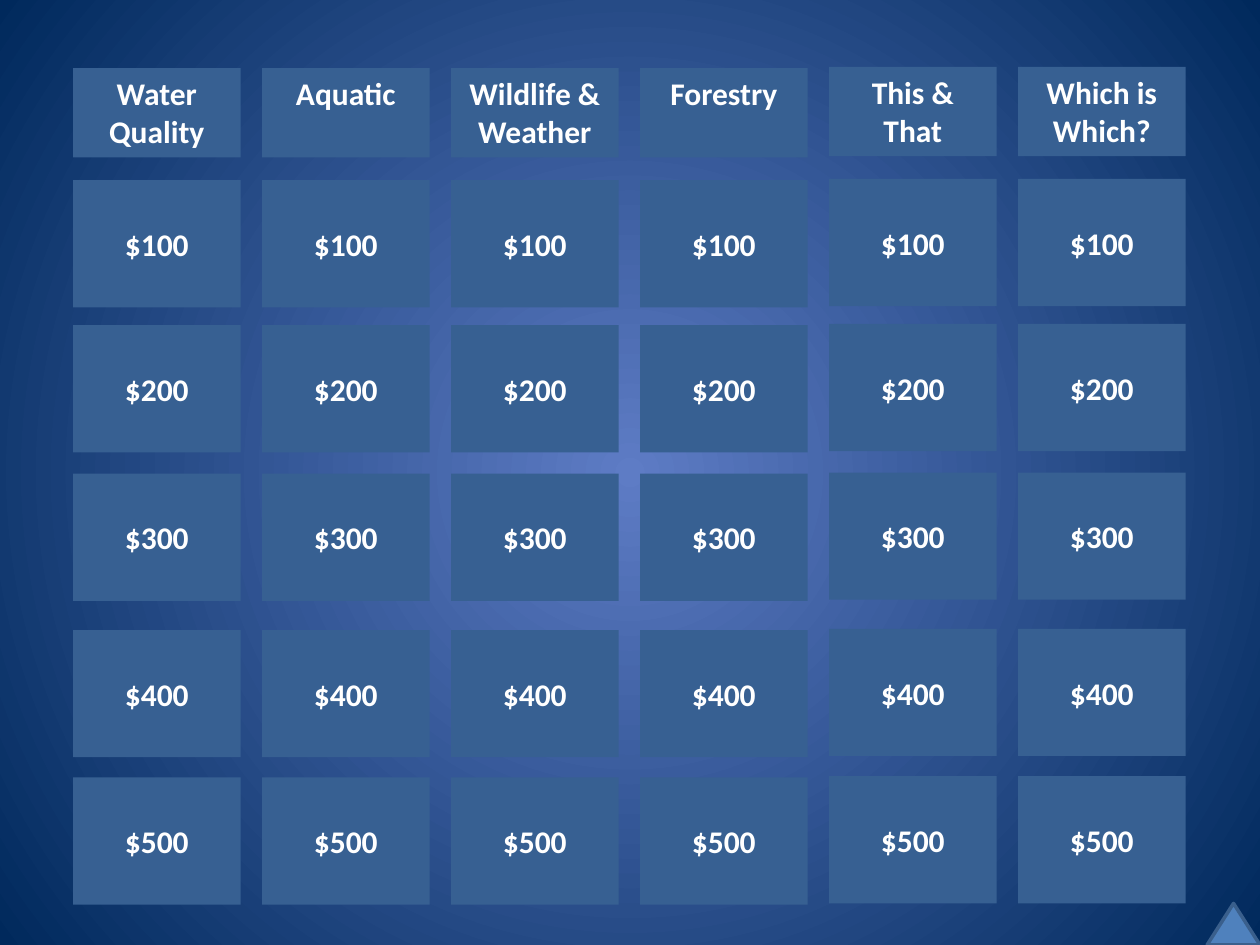
from lxml import etree
from pptx import Presentation
from pptx.dml.color import RGBColor
from pptx.enum.shapes import MSO_SHAPE
from pptx.enum.text import MSO_ANCHOR, PP_ALIGN
from pptx.oxml.ns import qn
from pptx.util import Inches, Pt

RECT, TRIANGLE = MSO_SHAPE.RECTANGLE, MSO_SHAPE.ISOSCELES_TRIANGLE
TOP, MIDDLE = MSO_ANCHOR.TOP, MSO_ANCHOR.MIDDLE
CENTER = PP_ALIGN.CENTER

CATEGORIES = ["Water Quality", "Aquatic", "Wildlife & Weather",
              "Forestry", "This & That", "Which is Which?"]
PRICE_TOPS = {"$100": 1.43, "$200": 2.58, "$300": 3.76, "$400": 5, "$500": 6.17}
LEFT, PITCH, TILE_W = 0.58, 1.5, 1.33
HEADER_TOP, HEADER_H, PRICE_H = 0.54, 0.71, 1.01
RAISED_FROM, RAISE = 4, 0.01


def rgb(value):
    return RGBColor.from_string(value)


class Board:
    font, size, text_color, tile_color = "Calibri", 18, "FFFFFF", "376092"

    def __init__(self, slide):
        self.s = slide

    def background(self, inner, outer):
        fill = self.s.background.fill
        fill.gradient()
        for stop, color in zip(fill.gradient_stops, (inner, outer)):
            stop.color.rgb = rgb(color)
        grad = self.s.element.find(".//" + qn("a:gradFill"))
        grad.remove(grad.find(qn("a:lin")))
        circle = etree.SubElement(grad, qn("a:path"), {"path": "circle"})
        etree.SubElement(circle, qn("a:fillToRect"), dict.fromkeys("ltrb", "50000"))

    def shape(self, kind, x, y, w, h, fill):
        sp = self.s.shapes.add_shape(kind, Inches(x), Inches(y), Inches(w), Inches(h))
        sp.shadow.inherit = False
        sp.fill.solid()
        sp.fill.fore_color.rgb = rgb(fill)
        return sp

    def tile(self, text, column, y, h, anchor):
        if column >= RAISED_FROM:
            y -= RAISE
        sp = self.shape(RECT, LEFT + column * PITCH, y, TILE_W, h, self.tile_color)
        sp.line.fill.background()
        tf = sp.text_frame
        tf.word_wrap = True
        tf.vertical_anchor = anchor
        p = tf.paragraphs[0]
        p.text = text
        p.alignment = CENTER
        p.font.name = self.font
        p.font.size = Pt(self.size)
        p.font.bold = True
        p.font.color.rgb = rgb(self.text_color)

    def triangle(self, x, y, w, h, fill, line):
        sp = self.shape(TRIANGLE, x, y, w, h, fill)
        sp.line.color.rgb = rgb(line)
        sp.line.width = Pt(2)


def main():
    prs = Presentation()
    prs.slide_width, prs.slide_height = Inches(10), Inches(7.5)
    board = Board(prs.slides.add_slide(prs.slide_layouts[6]))
    board.background("5E7CC5", "00295C")
    for price, top in PRICE_TOPS.items():
        for column in range(len(CATEGORIES)):
            board.tile(price, column, top, PRICE_H, MIDDLE)
    for column, category in enumerate(CATEGORIES):
        board.tile(category, column, HEADER_TOP, HEADER_H, TOP)
    board.triangle(9.58, 7.17, 0.42, 0.33, "4F81BD", "3A5F8C")
    prs.save("out.pptx")


if __name__ == "__main__":
    main()
